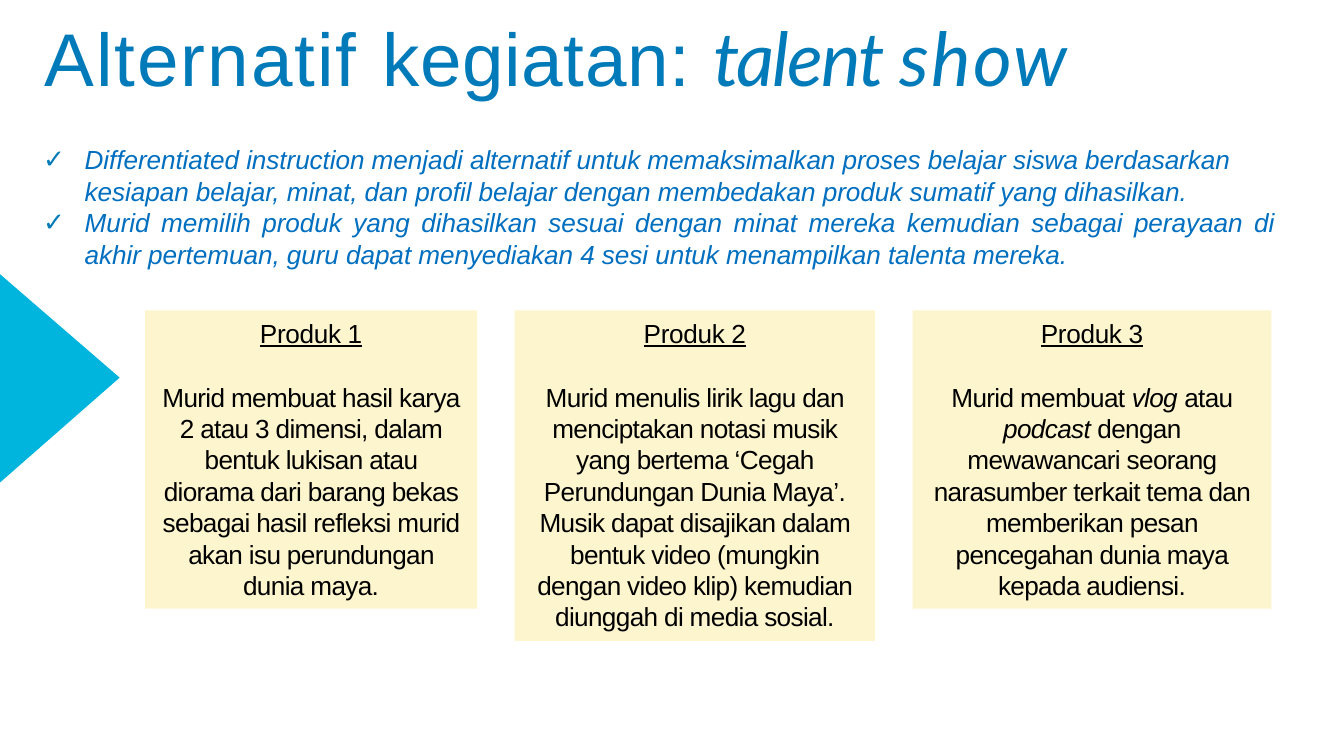
from typing import NamedTuple

from lxml.etree import SubElement
from pptx import Presentation
from pptx.dml.color import RGBColor as RGB
from pptx.enum.shapes import MSO_SHAPE as Shape
from pptx.enum.text import MSO_ANCHOR as Anchor, MSO_AUTO_SIZE as Fit, PP_ALIGN as Align
from pptx.oxml.ns import qn
from pptx.util import Inches, Pt

BLUE, TEXT, CYAN, CREAM, BLACK = "007AB8", "006FC0", "00B5DD", "FDF5CD", "000000"
WIDE = 10
HIGH = WIDE * 9 / 16
LEAD = Pt(16.8)


class Part(NamedTuple):
    text: str
    italic: bool = False
    space: float = -0.37
    font: str = "Arial"


class Card(NamedTuple):
    left: float
    width: float
    height: float
    inset: float
    head: str
    paras: list[list[Part]]


TITLE = [
    Part("Alternatif ", space=1.1),
    Part("kegiatan: ", space=0.4),
    Part("talent ", True, -1.1, "Lato"),
    Part("show", True, 1.1, "Lato"),
]
POINTS = [
    ("Differentiated instruction menjadi alternatif untuk memaksimalkan proses belajar "
     "siswa berdasarkan kesiapan belajar, minat, dan profil belajar dengan membedakan "
     "produk sumatif yang dihasilkan.", Align.LEFT),
    ("Murid memilih produk yang dihasilkan sesuai dengan minat mereka kemudian sebagai "
     "perayaan di akhir pertemuan, guru dapat menyediakan 4 sesi untuk menampilkan "
     "talenta mereka.", Align.JUSTIFY),
]
CARDS = [
    Card(1.08, 2.47, 2.22, 0.1, "Produk 1", [
        [Part("Murid membuat hasil karya 2 atau 3 dimensi, dalam bentuk lukisan atau "
              "diorama dari barang bekas sebagai hasil refleksi murid akan isu "
              "perundungan dunia maya.")]]),
    Card(3.83, 2.68, 2.46, 0.12, "Produk 2", [
        [Part("Murid menulis lirik lagu dan menciptakan notasi musik yang bertema "
              "‘Cegah Perundungan Dunia Maya’.")],
        [Part("Musik dapat disajikan dalam bentuk video (mungkin dengan video klip) "
              "kemudian diunggah di media sosial.")]]),
    Card(6.79, 2.67, 2.22, 0.12, "Produk 3", [
        [Part("Murid membuat "), Part("vlog ", True), Part("atau "),
         Part("podcast ", True),
         Part("dengan mewawancari seorang narasumber terkait tema dan memberikan "
              "pesan pencegahan dunia maya kepada audiensi.")]]),
]


def color(code: str) -> RGB:
    return RGB.from_string(code)


def paint(shape, code: str) -> None:
    shape.shadow.inherit = False
    shape.fill.solid()
    shape.fill.fore_color.rgb = color(code)
    shape.line.fill.background()


def place(shape, left: float, top: float, width: float, height: float) -> None:
    shape.left, shape.top = Inches(left), Inches(top)
    shape.width, shape.height = Inches(width), Inches(height)


def frame(shape, top: float, side: float = 0):
    box = shape.text_frame
    box.word_wrap, box.auto_size = True, Fit.NONE
    box.vertical_anchor = Anchor.TOP
    box.margin_left = box.margin_right = Inches(side)
    box.margin_top, box.margin_bottom = Inches(top), 0
    return box


def style(run, part: Part, size: float, code: str) -> None:
    font = run.font
    font.name, font.size, font.italic = part.font, Pt(size), part.italic
    font.color.rgb = color(code)
    run._r.get_or_add_rPr().set("spc", str(round(part.space * 100)))


def write(para, parts: list[Part], size: float, code: str) -> None:
    for part in parts:
        run = para.add_run()
        run.text = part.text
        style(run, part, size, code)


def check(para) -> None:
    """Give the paragraph a hanging tick."""
    props = para._p.get_or_add_pPr()
    props.set("marL", str(Inches(0.33)))
    props.set("indent", str(Inches(-0.31)))
    tint = SubElement(props, qn("a:buClr"))
    SubElement(tint, qn("a:srgbClr")).set("val", BLUE)
    SubElement(props, qn("a:buChar")).set("char", "✓")


def draw(slide, card: Card) -> None:
    shape = slide.shapes.add_shape(Shape.RECTANGLE, 0, 0, 0, 0)
    place(shape, card.left, 2.31, card.width, card.height)
    paint(shape, CREAM)
    box = frame(shape, 0.05, card.inset)
    head = box.paragraphs[0]
    write(head, [Part(card.head, space=-0.2)], 14, BLACK)
    head.runs[0].font.underline = True
    head.space_after = Pt(17.5)
    for parts in card.paras:
        write(box.add_paragraph(), parts, 14, BLACK)
    for para in box.paragraphs:
        para.alignment, para.line_spacing = Align.CENTER, LEAD


def main() -> None:
    deck = Presentation()
    deck.slide_width, deck.slide_height = Inches(WIDE), Inches(HIGH)
    slide = deck.slides.add_slide(deck.slide_layouts[1])

    # Arrow on the left edge
    pen = slide.shapes.build_freeform(0, Inches(2.04))
    pen.add_line_segments([(0, Inches(3.59)), (Inches(0.89), Inches(2.81))])
    paint(pen.convert_to_shape(), CYAN)

    # Title
    title = slide.shapes.title
    place(title, 0.31, 0.07, 7.86, 0.7)
    box = frame(title, 0.02)
    box.margin_left = Inches(0.02)
    para = box.paragraphs[0]
    para.alignment = Align.LEFT
    write(para, TITLE, 40, BLUE)

    # List
    body = slide.placeholders[1]
    place(body, 0.3, 1.06, 9.18, 0.96)
    box = frame(body, 0.01)
    box.text = "\n".join(text for text, _ in POINTS)
    for para, (text, align) in zip(box.paragraphs, POINTS):
        check(para)
        para.alignment, para.line_spacing = align, LEAD
        para.space_before = Pt(0)
        style(para.runs[0], Part(text, True, -0.06), 14, TEXT)

    # Product cards
    for card in CARDS:
        draw(slide, card)

    deck.save("out.pptx")


if __name__ == "__main__":
    main()
